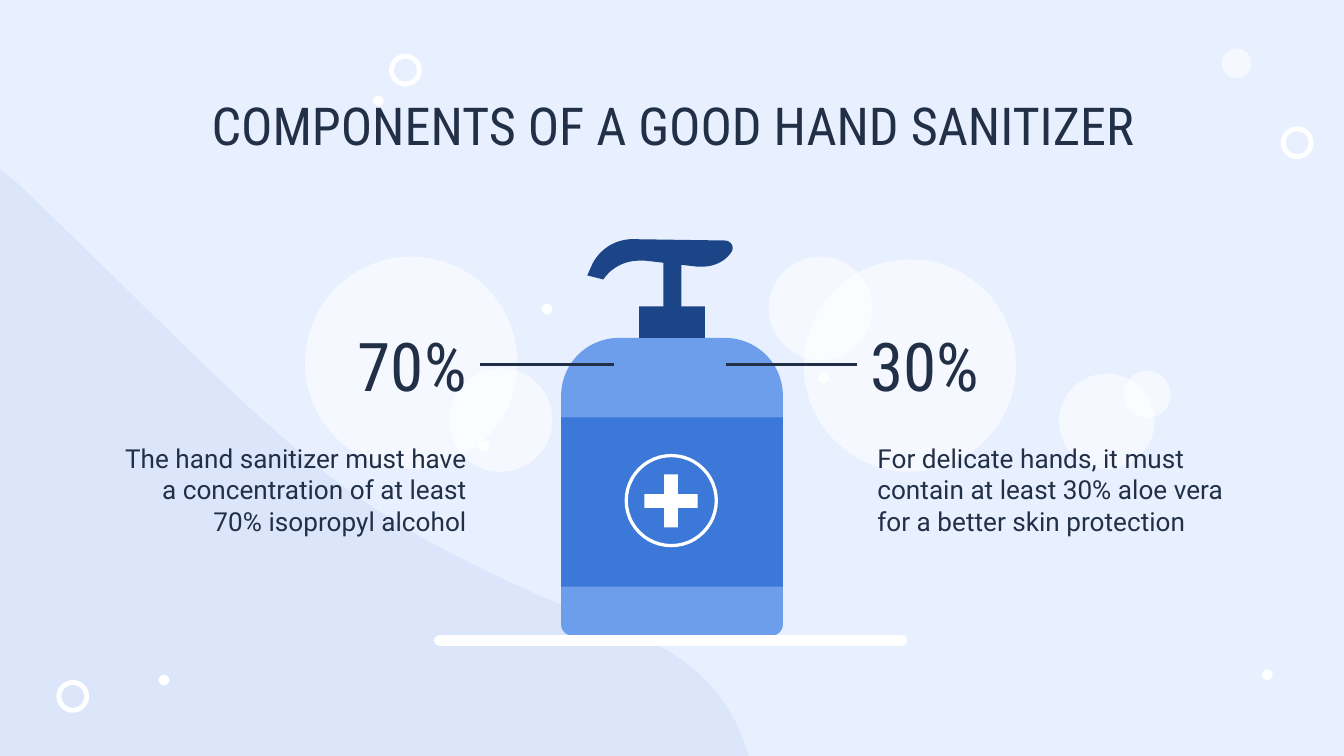
from dataclasses import dataclass

from lxml.etree import SubElement
from pptx import Presentation
from pptx.dml.color import RGBColor
from pptx.enum.shapes import MSO_CONNECTOR, MSO_SHAPE
from pptx.enum.text import MSO_ANCHOR, PP_ALIGN
from pptx.oxml.ns import qn
from pptx.util import Inches, Pt


@dataclass(frozen=True)
class Theme:
    backdrop: str = "E8F0FF"
    wave: str = "DBE6FA"
    white: str = "FFFFFF"
    ink: str = "223047"
    bottle: str = "6D9EEB"
    label: str = "3C78D8"
    pump: str = "1C4587"
    heading_font: str = "Roboto Condensed"
    body_font: str = "Roboto"
    title_size: int = 28
    percent_size: int = 36
    body_size: int = 14
    bubble_alpha: int = 60


@dataclass(frozen=True)
class Box:
    left: float
    top: float
    width: float
    height: float

    def area(self, column, row, width, height):
        return Box(self.left + column, self.top + row, width, height)

    def lengths(self):
        return [cells(value) for value in (self.left, self.top, self.width, self.height)]


THEME = Theme()
COLUMNS, ROWS = 100, 56.25
CELL = 0.1
CURVE_STEPS = 24
DOT, RING = 0.8, 2.44


def cells(count):
    return Inches(count * CELL)


def color(code):
    return RGBColor.from_string(code)


def paint(shape, fill, alpha=100):
    shape.shadow.inherit = False
    shape.fill.solid()
    shape.fill.fore_color.rgb = color(fill)
    shape.line.fill.background()
    if alpha < 100:
        tone = shape._element.spPr.find(f"{qn('a:solidFill')}/{qn('a:srgbClr')}")
        SubElement(tone, qn("a:alpha"), val=str(alpha * 1000))
    return shape


def add_preset(page, kind, box, fill, adjustments=(), alpha=100):
    shape = page.shapes.add_shape(kind, *box.lengths())
    for index, value in enumerate(adjustments):
        shape.adjustments[index] = value
    return paint(shape, fill, alpha)


def add_circle(page, box, column, row, size, alpha=100):
    spot = box.area(column, row, size, size)
    return add_preset(page, MSO_SHAPE.OVAL, spot, THEME.white, alpha=alpha)


def curve_points(start, first, second, end):
    for step in range(1, CURVE_STEPS + 1):
        t = step / CURVE_STEPS
        weights = ((1 - t) ** 3, 3 * t * (1 - t) ** 2, 3 * t**2 * (1 - t), t**3)
        yield tuple(
            sum(weight * value for weight, value in zip(weights, axis))
            for axis in zip(start, first, second, end)
        )


def add_outline(page, box, segments, fill):
    points = []
    for segment in segments:
        if len(segment) == 2:
            points.append(segment)
        else:
            pairs = (segment[:2], segment[2:4], segment[4:])
            points.extend(curve_points(points[-1], *pairs))
    corners = [(cells(box.left + x), cells(box.top + y)) for x, y in points]
    builder = page.shapes.build_freeform(*corners[0])
    builder.add_line_segments(corners[1:], close=True)
    return paint(builder.convert_to_shape(), fill)


def add_text(page, box, words, font, size, align, anchor=MSO_ANCHOR.TOP):
    text_box = page.shapes.add_textbox(*box.lengths())
    frame = text_box.text_frame
    frame.word_wrap = True
    frame.vertical_anchor = anchor
    frame.margin_left = frame.margin_right = cells(1)
    frame.margin_top = frame.margin_bottom = cells(1)
    frame.text = words
    para = frame.paragraphs[0]
    para.alignment = align
    span = para.runs[0]
    span.font.name = font
    span.font.size = Pt(size)
    span.font.color.rgb = color(THEME.ink)
    return text_box


def draw_backdrop(page, box):
    page.background.fill.solid()
    page.background.fill.fore_color.rgb = color(THEME.backdrop)
    wave = [
        (0, 12.6), (0, box.height), (55.7, box.height),
        (54.6, 52.3, 51.9, 49.1, 47.6, 47.4),
        (24.6, 38.3, 23.5, 35, 2, 14.3),
        (1.4, 13.7, 0.7, 13.1, 0, 12.6),
    ]
    add_outline(page, box, wave, THEME.wave)
    for column, row, size in ((90.9, 3.6, 2.2), (78.8, 27.8, 7.1), (83.6, 27.6, 3.5)):
        add_circle(page, box, column, row, size, THEME.bubble_alpha)
    dots = ((11.8, 50.2), (93.9, 49.8), (27.75, 7.1), (40.3, 22.6), (60.9, 27.7), (35.6, 32.8))
    for column, row in dots:
        add_circle(page, box, column, row, DOT)
    for column, row in ((4.2, 50.6), (28.95, 4), (95.3, 9.4)):
        spot = box.area(column, row, RING, RING)
        add_preset(page, MSO_SHAPE.DONUT, spot, THEME.white, [0.15])


def draw_bottle(page, box):
    body = box.area(9.45, 7.35, 16.5, 22.15)
    add_preset(page, MSO_SHAPE.ROUND_2_SAME_RECTANGLE, body, THEME.bottle, [0.26, 0.05])
    add_preset(page, MSO_SHAPE.RECTANGLE, body.area(0, 5.9, body.width, 12.6), THEME.label)

    badge = body.area(4.85, 8.75, 6.7, 6.7)
    circle = add_preset(page, MSO_SHAPE.OVAL, badge, THEME.label)
    circle.line.color.rgb = color(THEME.white)
    circle.line.width = Pt(1.75)
    cross = badge.area(1.35, 1.4, 3.95, 3.95)
    add_preset(page, MSO_SHAPE.CROSS, cross, THEME.white, [0.37])

    add_preset(page, MSO_SHAPE.RECTANGLE, box.area(15.25, 5, 4.9, 2.35), THEME.pump)
    add_preset(page, MSO_SHAPE.RECTANGLE, box.area(17.05, 1, 1.35, 4.5), THEME.pump)
    nozzle = [
        (14.8, 0), (13.5, 0, 12.4, 0.7, 11.8, 1.8), (11.4, 2.7), (12.6, 3),
        (13.2, 2.1, 14.2, 1.6, 15.3, 1.6), (15.4, 1.6, 15.6, 1.6, 15.7, 1.6),
        (19.6, 2.05), (19.7, 2.05, 19.8, 2.05, 19.9, 2.05),
        (20.8, 2.05, 21.6, 1.7, 22.1, 1), (22.4, 0.6, 22.1, 0.1, 21.6, 0.1),
    ]
    add_outline(page, box, nozzle, THEME.pump)
    ledge = box.area(0, 29.45, box.width, 0.8)
    add_preset(page, MSO_SHAPE.ROUNDED_RECTANGLE, ledge, THEME.white, [0.5])


def draw_component(page, box, percent, detail, align, bubbles, shift, pointer_end, site):
    for column, row, size in bubbles:
        add_circle(page, box, column, row, size, THEME.bubble_alpha)
    add_text(page, box.area(0, 12.8, box.width, 12.1), detail,
             THEME.body_font, THEME.body_size, align)
    percent_box = box.area(shift, 4.7, 23.8, 6.6)
    figure = add_text(page, percent_box, percent, THEME.heading_font,
                      THEME.percent_size, align, MSO_ANCHOR.MIDDLE)

    middle = cells(percent_box.top + percent_box.height / 2)
    end = cells(box.left + pointer_end)
    pointer = page.shapes.add_connector(MSO_CONNECTOR.STRAIGHT, end, middle, end, middle)
    pointer.begin_connect(figure, site)
    pointer.line.color.rgb = color(THEME.ink)
    pointer.line.width = Pt(1.5)
    SubElement(pointer._element.spPr, qn("a:effectLst"))


def draw_title(page, box):
    add_text(page, box, "COMPONENTS OF A GOOD HAND SANITIZER",
             THEME.heading_font, THEME.title_size, PP_ALIGN.CENTER)


def main():
    deck = Presentation()
    deck.slide_width, deck.slide_height = cells(COLUMNS), cells(ROWS)
    page = deck.slides.add_slide(deck.slide_layouts[6])
    draw_backdrop(page, Box(0, 0, COLUMNS, ROWS))
    draw_bottle(page, Box(32.3, 17.8, 35.2, 30.3))
    draw_component(
        page, Box(7.9, 19.1, 27.8, 24.9), "70%",
        "The hand sanitizer must have a concentration of at least 70% isopropyl alcohol",
        PP_ALIGN.RIGHT, ((14.8, 0, 15.8), (25.5, 8.3, 7.7)),
        shift=4, pointer_end=37.8, site=3,
    )
    draw_component(
        page, Box(64.3, 19.1, 27.8, 24.9), "30%",
        "For delicate hands, it must contain at least 30% aloe vera for a better skin protection",
        PP_ALIGN.LEFT, ((-4.5, 0.2, 15.8), (-7.1, 0, 7.7)),
        shift=-0.5, pointer_end=-10.3, site=1,
    )
    draw_title(page, Box(7.9, 5.9, 84.3, 5.2))
    deck.save("out.pptx")


if __name__ == "__main__":
    main()
